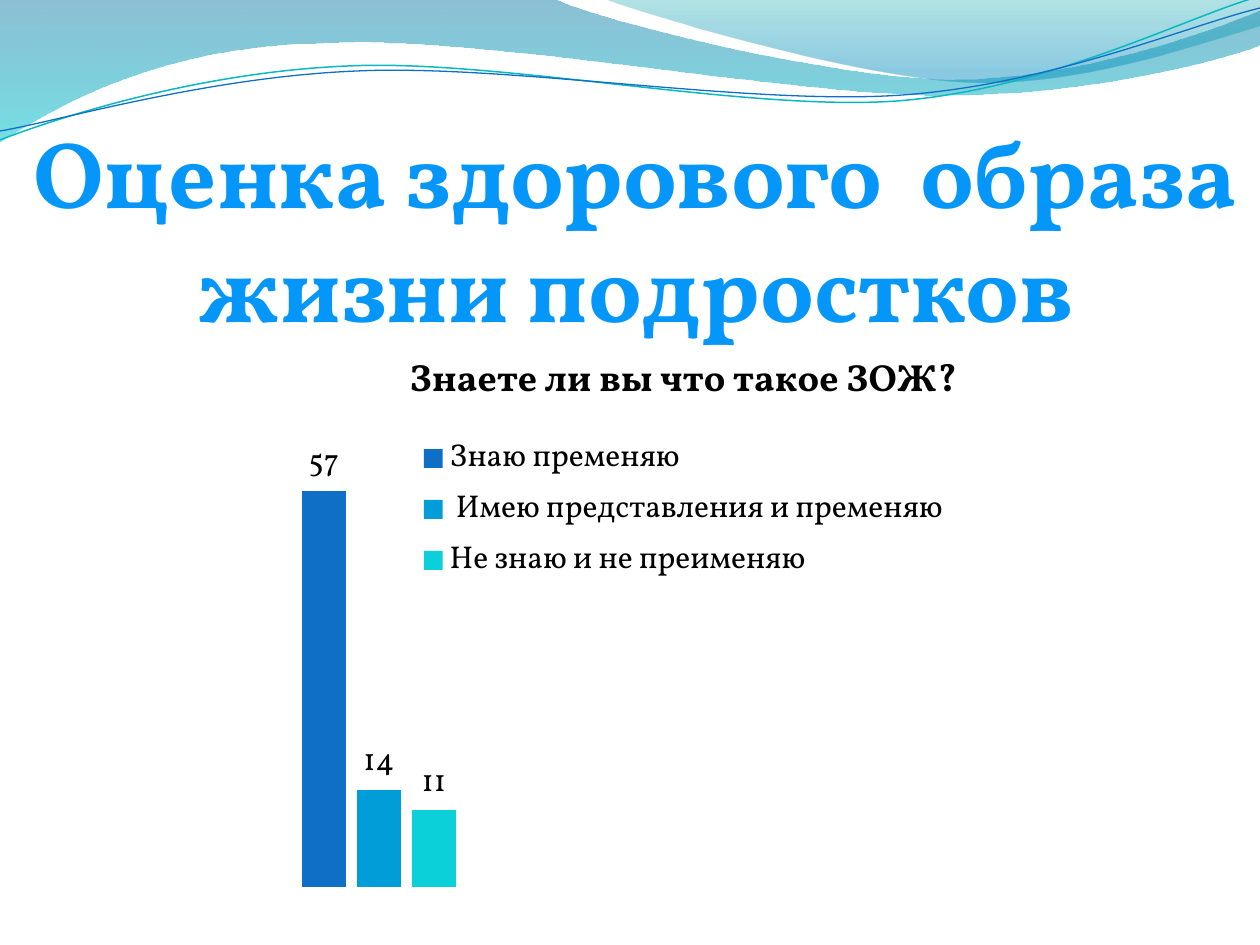
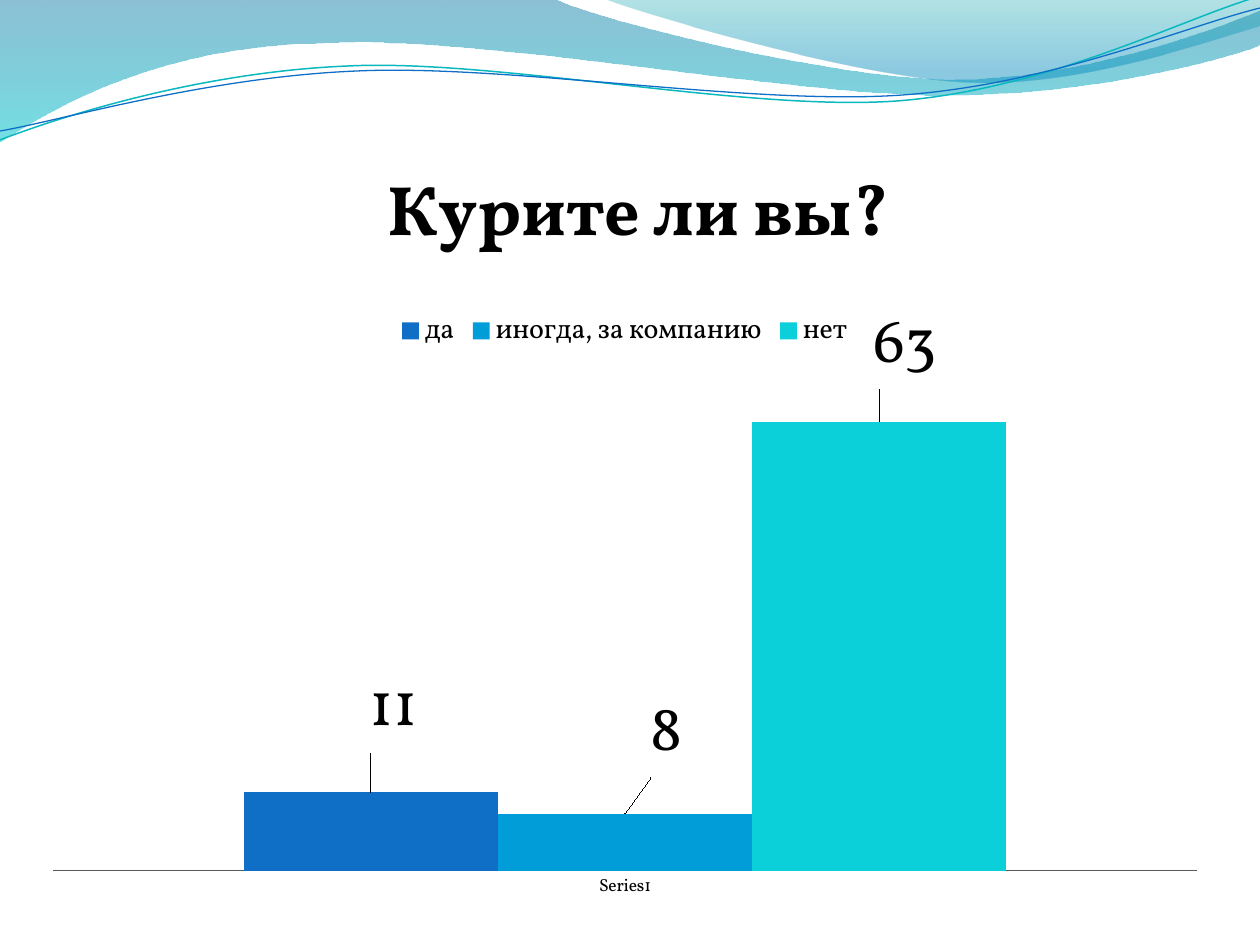
from math import cos, radians, sin

from lxml import etree
from pptx import Presentation
from pptx.chart.data import CategoryChartData
from pptx.dml.color import RGBColor
from pptx.enum.chart import XL_CHART_TYPE, XL_LABEL_POSITION, XL_LEGEND_POSITION, XL_TICK_LABEL_POSITION, XL_TICK_MARK
from pptx.enum.text import MSO_AUTO_SIZE, PP_ALIGN
from pptx.oxml.ns import qn
from pptx.util import Pt

COLUMNS = XL_CHART_TYPE.COLUMN_CLUSTERED
OUTSIDE_END = XL_LABEL_POSITION.OUTSIDE_END
LEGEND_TOP = XL_LEGEND_POSITION.TOP
NO_TICK = XL_TICK_MARK.NONE
NEXT_TO_AXIS = XL_TICK_LABEL_POSITION.NEXT_TO_AXIS
FIT_SHAPE = MSO_AUTO_SIZE.SHAPE_TO_FIT_TEXT
CENTER = PP_ALIGN.CENTER

SCALE = 914400 / 126
FONT = "Vollkorn"
C15 = "http://schemas.microsoft.com/office/drawing/2012/chart"
LEADER_LINES_URI = "{CE6537A1-D6FC-4f65-9D91-7224C49458BB}"
BLACK = RGBColor(0x00, 0x00, 0x00)
AXIS_GRAY = RGBColor(0x59, 0x59, 0x59)
TITLE_BLUE = RGBColor(0x04, 0x97, 0xF9)
BLUE = RGBColor(0x0F, 0x6F, 0xC6)
SKY = RGBColor(0x00, 0x9D, 0xD9)
TURQUOISE = RGBColor(0x0B, 0xD0, 0xD9)
WAVE_TEAL = RGBColor(0x0A, 0xB8, 0xBF)
DEEP_BLUE = RGBColor(0x00, 0x74, 0xA1)
AQUA = RGBColor(0x00, 0xC6, 0xCF)
DEEP_TEAL = RGBColor(0x00, 0xA1, 0xA9)
OCEAN = RGBColor(0x00, 0x8B, 0xBF)
SERIES_COLORS = (BLUE, SKY, TURQUOISE)

WAVE_ROTATION = 357.3
BANDS = [
    ([[(0, 0)], [(554, -1)],
      [(600, 21), (837, 79), (955, 79)], [(1075, 79), (1207, 33), (1260, 11)],
      [(1261, 45)],
      [(1239, 55), (1096, 96), (940, 95)], [(784, 95), (481, 35), (324, 43)],
      [(163, 45), (58, 105), (-1, 142)], [(0, 0)]],
     [(0, DEEP_BLUE, 45), (1, AQUA, 55)]),
    ([[(604, -1)],
      [(641, 14), (859, 78), (969, 82)], [(1079, 87), (1211, 40), (1260, 26)],
      [(1260, 0)], [(604, -1)]],
     [(0, DEEP_TEAL, 30), (0.8, OCEAN, 45)]),
]
WAVES = [
    ([[(0, 140)], [(60, 117), (199, 72), (349, 66)],
      [(498, 59), (747, 112), (898, 101)], [(1049, 89), (1182, 19), (1257, -3)]],
     (629, 72), WAVE_TEAL, 0.85),
    ([[(0, 131)], [(59, 121), (207, 77), (357, 71)],
      [(508, 64), (752, 106), (903, 95)], [(1053, 84), (1186, 26), (1260, 8)]],
     (629, 74), BLUE, 0.75),
]


def emu(px):
    return round(px * SCALE)


def turn_back(point, center):
    angle = radians(360 - WAVE_ROTATION)
    x, y = point[0] - center[0], point[1] - center[1]
    return (center[0] + x * cos(angle) - y * sin(angle),
            center[1] + x * sin(angle) + y * cos(angle))


def set_layout(parent, index, **values):
    for old_layout in parent.findall(qn("c:layout")):
        parent.remove(old_layout)
    layout = etree.Element(qn("c:layout"))
    manual = etree.SubElement(layout, qn("c:manualLayout"))
    for name, value in values.items():
        etree.SubElement(manual, qn("c:" + name)).set("val", str(value))
    parent.insert(index, layout)


class SlideBuilder:
    def __init__(self, presentation):
        self.presentation = presentation
        self.slide = None

    def new_slide(self):
        self.slide = self.presentation.slides.add_slide(self.presentation.slide_layouts[6])
        for segments, stops in BANDS:
            self.band(segments, stops)
        for segments, center, color, width in WAVES:
            self.wave(segments, center, color, width)

    def outline(self, segments, close):
        points = [(emu(x), emu(y)) for segment in segments for x, y in segment]
        builder = self.slide.shapes.build_freeform(*points[0])
        builder.add_line_segments(points[1:], close=close)
        shape = builder.convert_to_shape()
        shape.shadow.inherit = False
        lines = shape.element.iter(qn("a:lnTo"))
        for segment in segments[1:]:
            group = [next(lines) for _ in segment]
            if len(group) == 3:
                self.bend(group)
        return shape

    def bend(self, group):
        curve = etree.Element(qn("a:cubicBezTo"))
        group[0].addprevious(curve)
        for line in group:
            curve.append(line[0])
            line.getparent().remove(line)

    def band(self, segments, stops):
        shape = self.outline(segments, True)
        shape.line.fill.background()
        shape.fill.gradient()
        shape.fill.gradient_angle = 270
        for gradient_stop, (position, color, _) in zip(shape.fill.gradient_stops, stops):
            gradient_stop.position = position
            gradient_stop.color.rgb = color
        for color_element, (_, _, opacity) in zip(shape.element.iter(qn("a:srgbClr")), stops):
            etree.SubElement(color_element, qn("a:alpha")).set("val", str(opacity * 1000))

    def wave(self, segments, center, color, width):
        level = [[turn_back(point, center) for point in segment] for segment in segments]
        shape = self.outline(level, False)
        shape.rotation = WAVE_ROTATION
        shape.fill.background()
        shape.line.color.rgb = color
        shape.line.width = Pt(width)

    def style_font(self, font, size, color=BLACK, bold=False):
        font.name = FONT
        font.size = Pt(size)
        font.bold = bold
        font.color.rgb = color

    def add_run(self, paragraph, text, size, color=BLACK):
        run = paragraph.add_run()
        run.text = text
        self.style_font(run.font, size, color, True)

    def headline(self, box, lines):
        text_frame = self.slide.shapes.add_textbox(*map(emu, box)).text_frame
        text_frame.word_wrap = False
        text_frame.auto_size = FIT_SHAPE
        for index, line in enumerate(lines):
            paragraph = text_frame.add_paragraph() if index else text_frame.paragraphs[0]
            paragraph.alignment = CENTER
            self.add_run(paragraph, line, 54, TITLE_BLUE)

    def chart(self, box, title, title_size, categories, answers, maximum,
              overlap, size, legend_size, label_size):
        data = CategoryChartData()
        data.categories = categories
        for name, value in answers:
            data.add_series(name, [value] + [None] * (len(categories) - 1))
        chart = self.slide.shapes.add_chart(COLUMNS, *map(emu, box), data).chart
        self.style_font(chart.font, size)
        chart.has_title = True
        self.add_run(chart.chart_title.text_frame.paragraphs[0], title, title_size)
        chart.has_legend = True
        chart.legend.position = LEGEND_TOP
        chart.legend.include_in_layout = False
        self.style_font(chart.legend.font, legend_size)
        chart.value_axis.visible = False
        chart.value_axis.has_major_gridlines = False
        chart.value_axis.minimum_scale = 0
        chart.value_axis.maximum_scale = maximum
        plot = chart.plots[0]
        plot.vary_by_categories = False
        plot.gap_width = 150
        plot.overlap = overlap
        for series, color in zip(plot.series, SERIES_COLORS):
            series.format.fill.solid()
            series.format.fill.fore_color.rgb = color
            labels = series.data_labels
            labels.show_value = True
            labels.position = OUTSIDE_END
            self.style_font(labels.font, label_size)
        return chart

    def place(self, chart, chart_box, part, index, place, **modes):
        _, _, width, height = chart_box
        fractions = [px / whole for px, whole in zip(place, (width, height) * 2)]
        set_layout(chart.element.find(".//" + qn(part)), index, **modes,
                   xMode="edge", yMode="edge", **dict(zip("xywh", fractions)))

    def shift_labels(self, chart, chart_box, size, shifts):
        _, _, width, height = chart_box
        for series in chart.plots[0].series:
            label = series.points[0].data_label
            label.position = OUTSIDE_END
            self.style_font(label.font, size)
        for label_element, (x, y) in zip(chart.element.iter(qn("c:dLbl")), shifts):
            set_layout(label_element, 1, x=x / width, y=y / height)
        for labels_element in chart.element.iter(qn("c:dLbls")):
            extensions = etree.SubElement(labels_element, qn("c:extLst"))
            extension = etree.SubElement(extensions, qn("c:ext"), nsmap={"c15": C15})
            extension.set("uri", LEADER_LINES_URI)
            etree.SubElement(extension, "{%s}showLeaderLines" % C15).set("val", "0")


def lifestyle_slide(builder):
    builder.new_slide()
    builder.headline((11, 108, 1249, 242), ["Оценка здорового  образа", "жизни подростков"])
    box = (197, 325, 974, 588)
    chart = builder.chart(
        box, "Знаете ли вы что такое ЗОЖ?", 21.6, ["1", "2", "3", "4"],
        [("Знаю пременяю", 57), (" Имею представления и пременяю", 14),
         ("Не знаю и не преименяю", 11)],
        maximum=60, overlap=-25, size=18, legend_size=18, label_size=18)
    chart.category_axis.visible = False
    builder.place(chart, box, "c:plotArea", 0, (72, 145, 880, 417), layoutTarget="inner")
    builder.place(chart, box, "c:legend", 1, (209, 105, 555, 159))


def smoking_slide(builder):
    builder.new_slide()
    box = (29, 137, 1191, 777)
    chart = builder.chart(
        box, "Курите ли вы?", 40, ["Series1"],
        [("да", 11), ("иногда, за компанию", 8), ("нет", 63)],
        maximum=70, overlap=0, size=10, legend_size=16, label_size=36)
    axis = chart.category_axis
    axis.major_tick_mark = NO_TICK
    axis.minor_tick_mark = NO_TICK
    axis.tick_label_position = NEXT_TO_AXIS
    axis.format.line.color.rgb = AXIS_GRAY
    axis.format.line.width = Pt(0.75)
    builder.place(chart, box, "c:title", 1, (346, 12))
    builder.place(chart, box, "c:plotArea", 0, (24, 235, 1144, 499), layoutTarget="inner")
    builder.shift_labels(chart, box, 36, [(23, -34), (42, -31), (26, -27)])


def main():
    presentation = Presentation()
    presentation.slide_width = emu(1260)
    presentation.slide_height = emu(945)
    builder = SlideBuilder(presentation)
    lifestyle_slide(builder)
    smoking_slide(builder)
    presentation.save("out.pptx")


if __name__ == "__main__":
    main()
